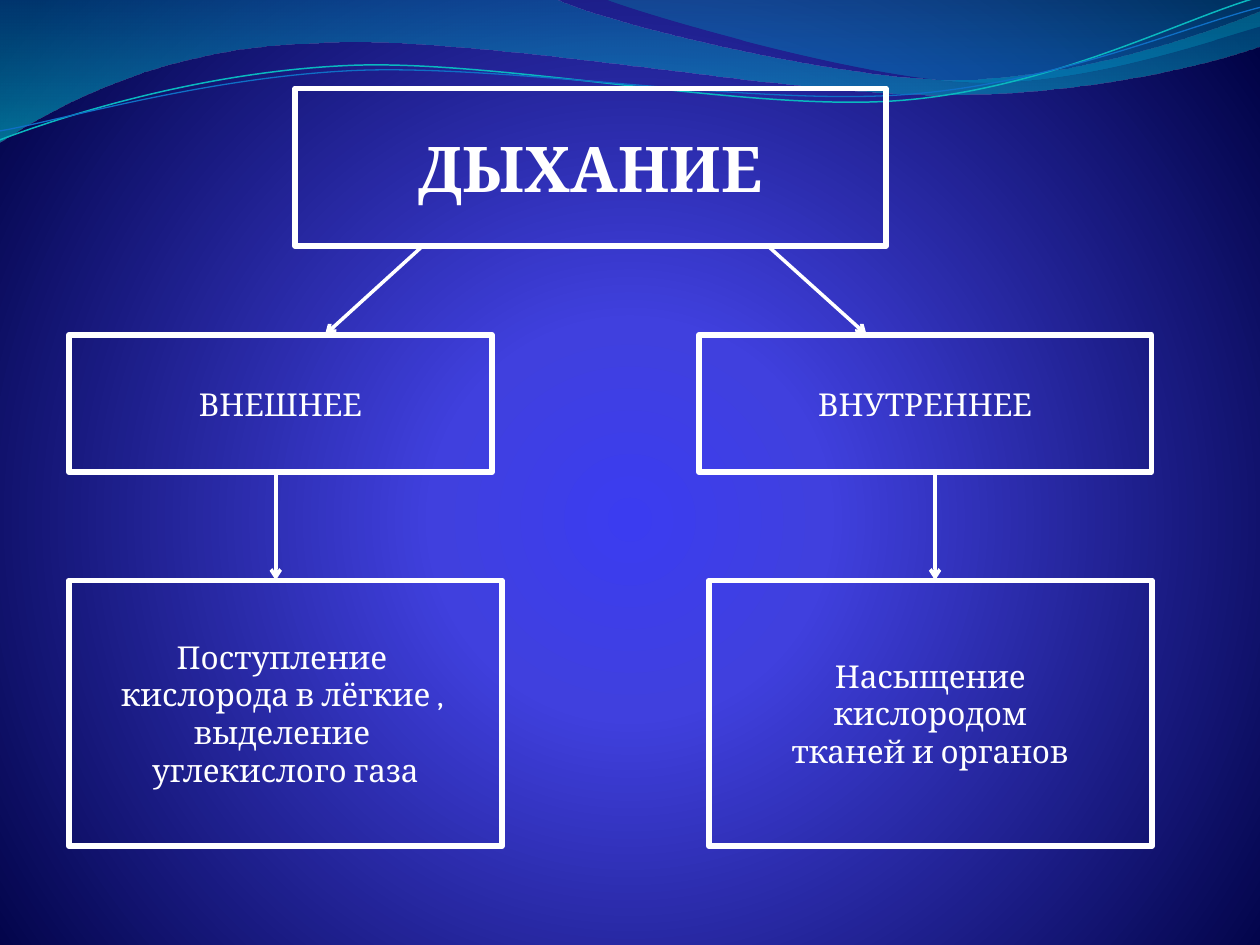
from lxml.etree import SubElement
from pptx import Presentation
from pptx.dml.color import RGBColor
from pptx.enum.shapes import MSO_CONNECTOR, MSO_SHAPE
from pptx.enum.text import MSO_ANCHOR, PP_ALIGN
from pptx.oxml.ns import qn
from pptx.util import Cm, Pt

HUES = {
    "white": "FFFFFF", "core": "3B3CF0", "glow": "4040DE", "night": "000244",
    "sea": "0074A1", "aqua": "00C6CF", "teal": "00A1A9", "sky": "008BBF",
    "mint": "0AB8BF", "blue": "0F6FC6",
}
FONT = "Cambria"

# Outlines in cm: a pair is a straight step, six numbers are a Bezier curve.
BANDS = [
    ([(0, 0), (11.18, -0.03), (12.09, 0.43, 16.87, 1.6, 19.25, 1.6),
      (21.67, 1.6, 24.33, 0.66, 25.4, 0.23), (25.43, 0.91),
      (24.97, 1.12, 22.1, 1.93, 18.95, 1.91),
      (15.8, 1.91, 9.7, 0.71, 6.53, 0.86),
      (3.28, 0.91, 1.17, 2.11, -0.03, 2.87), (0, 0)],
     [(0, "sea", 45), (100, "aqua", 55)]),
    ([(12.17, -0.03), (12.93, 0.28, 17.32, 1.57, 19.53, 1.65),
      (21.74, 1.75, 24.41, 0.81, 25.4, 0.53), (25.4, 0), (12.17, -0.03)],
     [(0, "teal", 30), (80, "sky", 45)]),
]
WAVES = [
    ([(0, 2.82), (1.22, 2.36, 4.01, 1.45, 7.04, 1.32),
      (10.03, 1.19, 15.06, 2.26, 18.11, 2.03),
      (21.16, 1.8, 23.83, 0.38, 25.35, -0.05)], "mint", 0.85),
    ([(0, 2.64), (1.19, 2.44, 4.17, 1.55, 7.19, 1.42),
      (10.24, 1.3, 15.16, 2.13, 18.21, 1.91),
      (21.23, 1.7, 23.9, 0.53, 25.4, 0.15)], "blue", 0.75),
]
KIND_TOP, KIND_HIGH = 6.75, 2.77
NOTE_TOP, NOTE_HIGH = 11.7, 5.36
HEAD_END = 4.95
KIND_END = KIND_TOP + KIND_HIGH
BOXES = [
    ("ВНЕШНЕЕ", 1.39, KIND_TOP, 8.53, KIND_HIGH),
    ("ВНУТРЕННЕЕ", 14.09, KIND_TOP, 9.12, KIND_HIGH),
    ("Поступление \nкислорода в лёгкие , \nвыделение \nуглекислого газа",
     1.39, NOTE_TOP, 8.73, NOTE_HIGH),
    ("Насыщение\n кислородом \nтканей и органов",
     14.29, NOTE_TOP, 8.93, NOTE_HIGH),
]
ARROWS = [
    (8.53, HEAD_END, 6.55, KIND_TOP), (15.47, HEAD_END, 17.47, KIND_TOP),
    (5.56, KIND_END, 5.56, NOTE_TOP), (18.85, KIND_END, 18.85, NOTE_TOP),
]


def hue(name):
    return RGBColor.from_string(HUES[name])


def shade(fill, root, stops, glow=None):
    """Set gradient stops with opacity; glow is the centre of a round one."""
    fill.gradient()
    grad = root.find(".//" + qn("a:gradFill"))
    for child in list(grad):
        grad.remove(child)
    row = SubElement(grad, qn("a:gsLst"))
    for pos, name, alpha in stops:
        stop = SubElement(row, qn("a:gs"), pos=str(pos * 1000))
        tint = SubElement(stop, qn("a:srgbClr"), val=HUES[name])
        SubElement(tint, qn("a:alpha"), val=str(alpha * 1000))
    if glow:
        ring = SubElement(grad, qn("a:path"), path="circle")
        rect = {k: str(v * 1000) for k, v in zip("ltrb", glow)}
        SubElement(ring, qn("a:fillToRect"), **rect)
    else:
        SubElement(grad, qn("a:lin"), ang="5400000", scaled="0")


def draw(slide, steps):
    """Build the outline by its corners, then bend the curved steps."""
    ends = [tuple(map(Cm, step[-2:])) for step in steps]
    pen = slide.shapes.build_freeform(*ends[0])
    pen.add_line_segments(ends[1:], close=ends[0] == ends[-1])
    shape = pen.convert_to_shape()
    shape.shadow.inherit = False
    lines = shape._element.spPr.findall(".//" + qn("a:lnTo"))
    for step, line in zip(steps[1:], lines):
        if len(step) == 2:
            continue
        bend = SubElement(line.getparent(), qn("a:cubicBezTo"))
        for x, y in zip(step[::2], step[1::2]):
            SubElement(bend, qn("a:pt"), x=str(Cm(x) - shape.left),
                       y=str(Cm(y) - shape.top))
        line.getparent().replace(line, bend)
    return shape


def add_band(slide, steps, stops):
    band = draw(slide, steps)
    shade(band.fill, band._element.spPr, stops)
    band.line.fill.background()


def rule(line, name, width):
    line.color.rgb = hue(name)
    line.width = Pt(width)


def add_wave(slide, steps, name, width):
    wave = draw(slide, steps)
    wave.fill.background()
    rule(wave.line, name, width)


def dress(box, text, size, bold=False):
    """Give a box its white frame and centred text."""
    box.fill.background()
    rule(box.line, "white", 3.15)
    frame = box.text_frame
    frame.text = text
    frame.word_wrap = True
    frame.vertical_anchor = MSO_ANCHOR.MIDDLE
    for para in frame.paragraphs:
        para.alignment = PP_ALIGN.CENTER
        for run in para.runs:
            font = run.font
            font.name, font.size, font.bold = FONT, Pt(size), bold
            font.color.rgb = hue("white")


def add_title(slide, text):
    title = slide.shapes.title
    title.left, title.top = Cm(5.95), Cm(1.78)
    title.width, title.height = Cm(11.91), Cm(3.18)
    dress(title, text, 36, True)
    slide.shapes._spTree.append(title._element)  # in front of the waves


def add_box(slide, text, *place):
    box = slide.shapes.add_shape(MSO_SHAPE.RECTANGLE, *map(Cm, place))
    box.shadow.inherit = False
    dress(box, text, 18)


def add_arrow(slide, *ends):
    arrow = slide.shapes.add_connector(MSO_CONNECTOR.STRAIGHT, *map(Cm, ends))
    rule(arrow.line, "white", 2)
    SubElement(arrow.line._get_or_add_ln(), qn("a:tailEnd"), type="arrow")
    SubElement(arrow._element.spPr, qn("a:effectLst"))


def main():
    deck = Presentation()
    deck.slide_width, deck.slide_height = Cm(25.4), Cm(19.05)
    slide = deck.slides.add_slide(deck.slide_layouts[5])
    shade(slide.background.fill, slide._element,
          [(0, "core", 100), (25, "glow", 100), (100, "night", 100)],
          (10, 110, 10, 100))
    for band in BANDS:
        add_band(slide, *band)
    for wave in WAVES:
        add_wave(slide, *wave)
    add_title(slide, "ДЫХАНИЕ")
    for box in BOXES:
        add_box(slide, *box)
    for arrow in ARROWS:
        add_arrow(slide, *arrow)
    deck.save("out.pptx")


if __name__ == "__main__":
    main()
